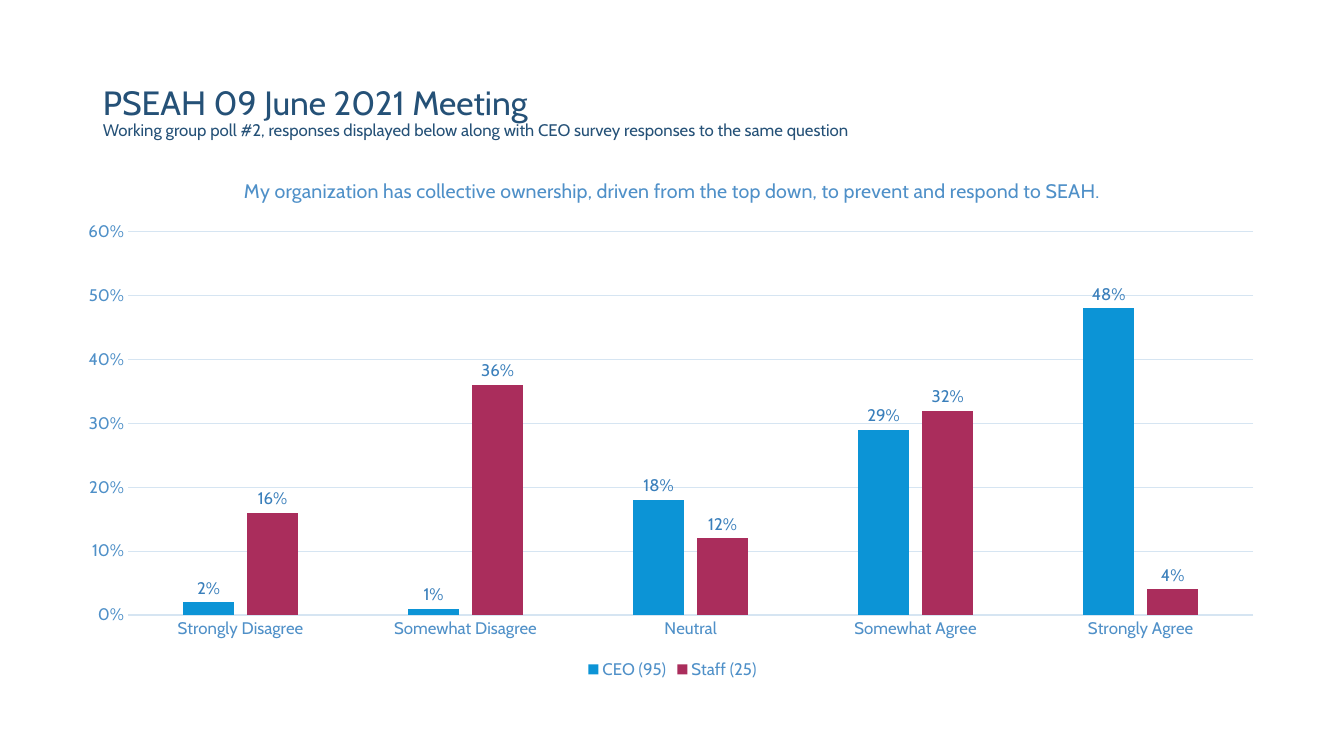
from lxml import etree
from pptx import Presentation
from pptx.chart.data import CategoryChartData
from pptx.dml.color import RGBColor
from pptx.enum.chart import XL_CHART_TYPE as ChartType
from pptx.enum.chart import XL_LABEL_POSITION as LabelPosition
from pptx.enum.chart import XL_LEGEND_POSITION as LegendPosition
from pptx.enum.chart import XL_TICK_MARK as TickMark
from pptx.enum.text import MSO_ANCHOR, MSO_AUTO_SIZE, PP_ALIGN
from pptx.oxml.ns import qn
from pptx.util import Inches, Pt

FONT = "Cabin"
NAVY = RGBColor(0x25, 0x51, 0x77)
AXIS_BLUE = RGBColor(0x4F, 0x90, 0xC8)
LABEL_BLUE = RGBColor(0x3A, 0x7F, 0xBB)
GRID_BLUE = RGBColor(0xD6, 0xE5, 0xF2)
CEO_BLUE = RGBColor(0x0C, 0x94, 0xD6)
STAFF_RED = RGBColor(0xAA, 0x2D, 0x5C)

HEADING = [
    ("PSEAH 09 June 2021 Meeting", 24),
    ("Working group poll #2, responses displayed below along with "
     "CEO survey responses to the same question", 12),
]
QUESTION = ("My organization has collective ownership, driven from the top down, "
            "to prevent and respond to SEAH.")
ANSWERS = ["Strongly Disagree", "Somewhat Disagree", "Neutral",
           "Somewhat Agree", "Strongly Agree"]
RESPONSES = [
    ("CEO (95)", [0.02, 0.01, 0.18, 0.29, 0.48], CEO_BLUE),
    ("Staff (25)", [0.16, 0.36, 0.12, 0.32, 0.04], STAFF_RED),
]


def style_font(font, size, color):
    font.name = FONT
    font.size = Pt(size)
    font.bold = False
    font.color.rgb = color


def style_line(line, color):
    line.color.rgb = color
    line.width = Pt(0.75)


def write_heading(title):
    title.left, title.top = Inches(0.92), Inches(0.4)
    title.width, title.height = Inches(11.5), Inches(1.45)
    frame = title.text_frame
    frame.auto_size = MSO_AUTO_SIZE.NONE
    frame.vertical_anchor = MSO_ANCHOR.MIDDLE
    frame.text = "\n".join(text for text, _ in HEADING)
    for paragraph, (_, size) in zip(frame.paragraphs, HEADING):
        paragraph.alignment = PP_ALIGN.LEFT
        paragraph.line_spacing = 0.9
        paragraph.space_before = Pt(0)
        style_font(paragraph.runs[0].font, size, NAVY)


def place_plot(chart, **fractions):
    """Fix the inner plot area as fractions of the chart frame."""
    plot_area = chart._chartSpace.chart.plotArea
    for layout in plot_area.findall(qn("c:layout")):
        plot_area.remove(layout)
    layout = etree.Element(qn("c:layout"))
    manual = etree.SubElement(layout, qn("c:manualLayout"))
    settings = {"layoutTarget": "inner", "xMode": "edge", "yMode": "edge", **fractions}
    for tag, value in settings.items():
        etree.SubElement(manual, qn(f"c:{tag}")).set("val", str(value))
    plot_area.insert(0, layout)


def style_axes(chart):
    for axis in (chart.category_axis, chart.value_axis):
        axis.major_tick_mark = axis.minor_tick_mark = TickMark.NONE
        style_font(axis.tick_labels.font, 12, AXIS_BLUE)
    style_line(chart.category_axis.format.line, GRID_BLUE)
    percent = chart.value_axis
    percent.minimum_scale, percent.maximum_scale, percent.major_unit = 0, 0.6, 0.1
    percent.tick_labels.number_format = "0%"
    percent.tick_labels.number_format_is_linked = False
    percent.format.line.fill.background()
    style_line(percent.major_gridlines.format.line, GRID_BLUE)


def style_series(series, color):
    series.format.fill.solid()
    series.format.fill.fore_color.rgb = color
    series.invert_if_negative = False
    labels = series.data_labels
    labels.show_value = True
    labels.position = LabelPosition.OUTSIDE_END
    labels.number_format = "0%"
    labels.number_format_is_linked = False
    style_font(labels.font, 12, LABEL_BLUE)


def add_poll_chart(slide):
    data = CategoryChartData(number_format="0%")
    data.categories = ANSWERS
    for name, shares, _ in RESPONSES:
        data.add_series(name, shares)
    chart = slide.shapes.add_chart(
        ChartType.COLUMN_CLUSTERED, Inches(0.67), Inches(1.57),
        Inches(12), Inches(5.21), data).chart
    style_font(chart.font, 10, NAVY)

    chart.has_title = True
    chart.chart_title.include_in_layout = False
    question = chart.chart_title.text_frame
    question.text = QUESTION
    style_font(question.paragraphs[0].runs[0].font, 14, AXIS_BLUE)

    chart.has_legend = True
    chart.legend.position = LegendPosition.BOTTOM
    chart.legend.include_in_layout = False
    style_font(chart.legend.font, 12, AXIS_BLUE)

    style_axes(chart)
    plot = chart.plots[0]
    plot.gap_width, plot.overlap = 219, -27
    plot.vary_by_categories = False
    for series, (_, _, color) in zip(plot.series, RESPONSES):
        style_series(series, color)
    place_plot(chart, x=0.05, y=0.14, w=0.93, h=0.73)


def main():
    deck = Presentation()
    deck.slide_width, deck.slide_height = Inches(13.33), Inches(7.5)
    slide = deck.slides.add_slide(deck.slide_layouts[5])
    write_heading(slide.shapes.title)
    add_poll_chart(slide)
    deck.save("out.pptx")


if __name__ == "__main__":
    main()
